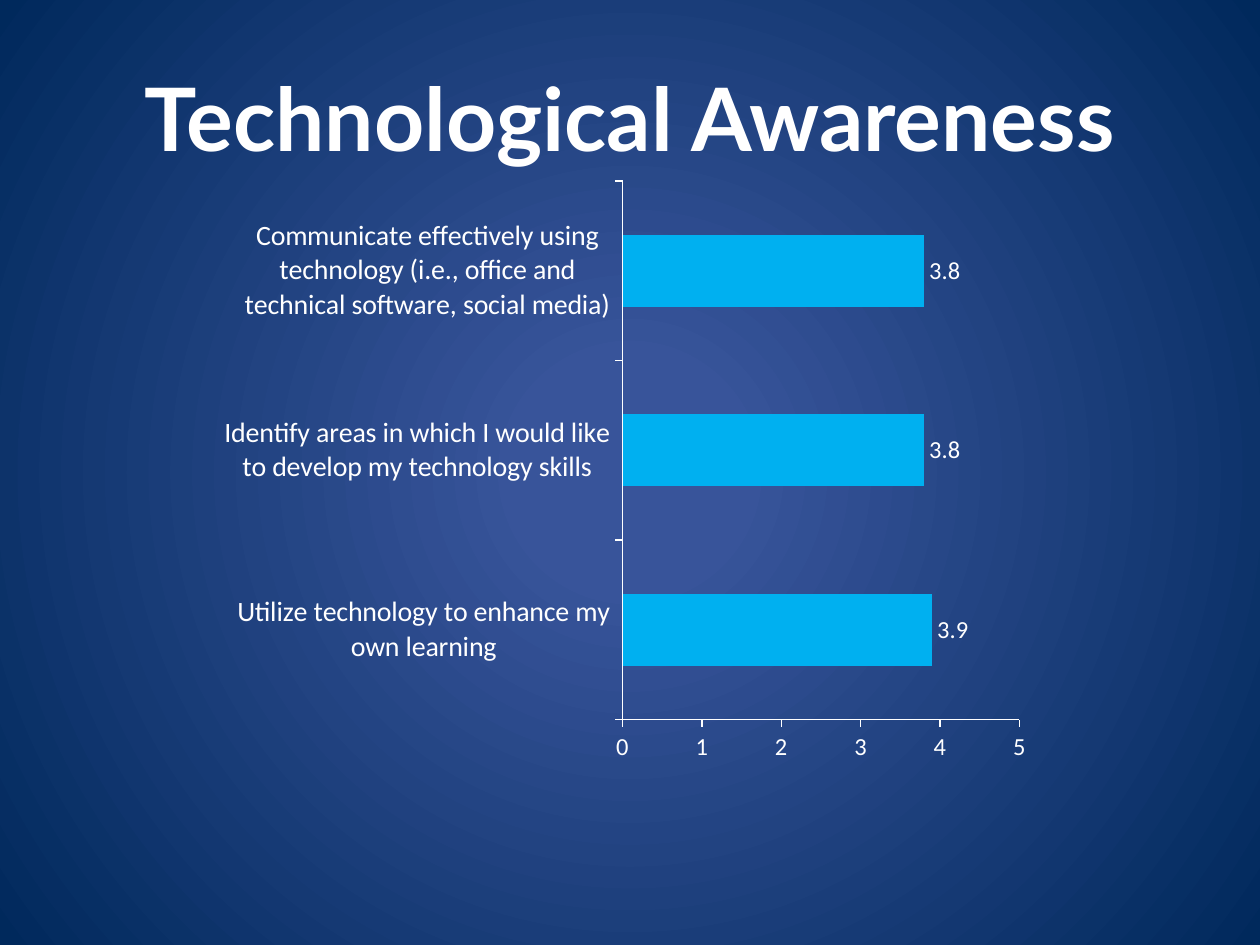
"""Build the Technological Awareness survey slide."""
from pptx import Presentation
from pptx.chart.data import CategoryChartData
from pptx.dml.color import RGBColor
from pptx.enum.chart import XL_CHART_TYPE as Kind, XL_LABEL_POSITION as Spot, XL_TICK_MARK as Tick
from pptx.enum.text import MSO_ANCHOR as Anchor, PP_ALIGN as Align
from pptx.oxml import parse_xml
from pptx.oxml.ns import nsdecls, qn
from pptx.util import Inches, Pt

TITLE = "Technological Awareness"
SCORES = [
    ("Utilize technology to enhance my own learning", 3.9),
    ("Identify areas in which I would like to develop my technology skills", 3.8),
    ("Communicate effectively using technology (i.e., office and technical software, social media)", 3.8),
]
PLOT = {"x": 0.49, "y": 0.05, "w": 0.49, "h": 0.83}

WHITE = RGBColor(0xFF, 0xFF, 0xFF)
SKY = RGBColor(0x00, 0xB0, 0xF0)
GLOW = RGBColor(0x38, 0x54, 0x9A)
NAVY = RGBColor(0x00, 0x29, 0x5C)


def style(font, size, face="Calibri", bold=False):
    font.name, font.size, font.bold = face, Pt(size), bold
    font.color.rgb = WHITE


def write(shape, text, size, face, bold=False, align=Align.CENTER):
    frame = shape.text_frame
    frame.word_wrap = True
    frame.vertical_anchor = Anchor.MIDDLE
    para = frame.paragraphs[0]
    para.alignment = align
    run = para.add_run()
    run.text = text
    style(run.font, size, face, bold)


def place(shape, left, top, width, height):
    shape.left, shape.top = Inches(left), Inches(top)
    shape.width, shape.height = Inches(width), Inches(height)


def paint(slide):
    fill = slide.background.fill
    fill.gradient()
    for stop, (spot, color) in zip(fill.gradient_stops, [(0.14, GLOW), (1, NAVY)]):
        stop.position, stop.color.rgb = spot, color
    grad = slide.element.find(".//" + qn("a:gradFill"))
    grad.replace(grad.find(qn("a:lin")), parse_xml(
        f'<a:path {nsdecls("a")} path="circle">'
        '<a:fillToRect l="50000" t="50000" r="50000" b="50000"/></a:path>'))


def fix_plot(chart):
    area = chart.element.find(".//" + qn("c:plotArea"))
    old = area.find(qn("c:layout"))
    if old is not None:
        area.remove(old)
    modes = '<c:xMode val="edge"/><c:yMode val="edge"/>'
    sizes = "".join(f'<c:{key} val="{val}"/>' for key, val in PLOT.items())
    area.insert(0, parse_xml(
        f'<c:layout {nsdecls("c")}><c:manualLayout><c:layoutTarget val="inner"/>'
        f"{modes}{sizes}</c:manualLayout></c:layout>"))


def add_bars(slide):
    data = CategoryChartData()
    data.categories = [name for name, _ in SCORES]
    data.add_series("Series 1", [score for _, score in SCORES])
    box = [Inches(n) for n in (1.78, 1.18, 6.44, 5.15)]
    chart = slide.shapes.add_chart(Kind.BAR_CLUSTERED, *box, data).chart
    chart.has_legend = chart.has_title = False
    style(chart.font, 10)
    for axis, size in ((chart.category_axis, 16), (chart.value_axis, 14)):
        axis.has_major_gridlines = False
        axis.major_tick_mark, axis.minor_tick_mark = Tick.OUTSIDE, Tick.NONE
        axis.format.line.color.rgb = WHITE
        axis.format.line.width = Pt(0.75)
        style(axis.tick_labels.font, size)
    scale = chart.value_axis
    scale.minimum_scale, scale.maximum_scale, scale.major_unit = 0, 5, 1
    scale.tick_labels.number_format = "0"
    scale.tick_labels.number_format_is_linked = False
    plot = chart.plots[0]
    plot.gap_width, plot.vary_by_categories = 150, False
    bars = plot.series[0]
    bars.format.fill.solid()
    bars.format.fill.fore_color.rgb = SKY
    labels = bars.data_labels
    labels.show_value, labels.position = True, Spot.OUTSIDE_END
    labels.number_format, labels.number_format_is_linked = "0.0", False
    style(labels.font, 14)
    fix_plot(chart)


def main():
    deck = Presentation()
    deck.slide_width, deck.slide_height = Inches(10), Inches(7.5)
    slide = deck.slides.add_slide(deck.slide_layouts[5])
    paint(slide)
    title = slide.shapes.title
    place(title, 0.5, 0.3, 9, 1.25)
    write(title, TITLE, 50, "Lato", bold=True)
    add_bars(slide)
    deck.save("out.pptx")


if __name__ == "__main__":
    main()
